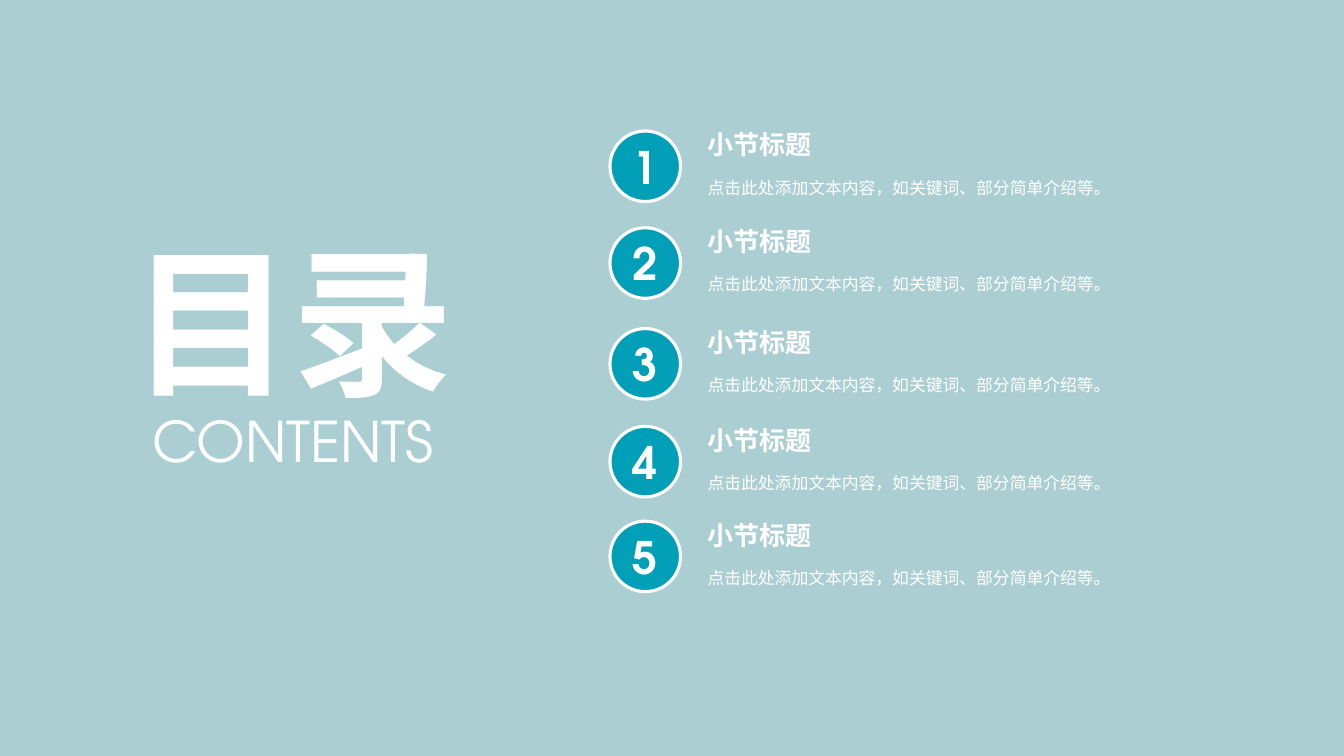
from dataclasses import dataclass

from lxml.etree import SubElement
from pptx import Presentation
from pptx.dml.color import RGBColor as RGB
from pptx.enum.shapes import MSO_SHAPE as SHAPE
from pptx.enum.text import MSO_ANCHOR as ANCHOR, MSO_AUTO_SIZE as FIT, PP_ALIGN as ALIGN
from pptx.oxml.ns import qn
from pptx.util import Inches, Pt

# Content
HEADING = "目录"
SUBHEADING = "CONTENTS"
BLURB = "点击此处添加文本内容，如关键词、部分简单介绍等。"
# (section title, description, row top in inches)
SECTIONS = [
    ("小节标题", BLURB, 1.23),
    ("小节标题", BLURB, 2.19),
    ("小节标题", BLURB, 3.19),
    ("小节标题", BLURB, 4.16),
    ("小节标题", BLURB, 5.10),
]


@dataclass(frozen=True)
class Theme:
    background: RGB = RGB.from_string("AACED2")
    accent: RGB = RGB.from_string("009FB8")
    text: RGB = RGB.from_string("FFFFFF")
    latin: str = "TeX Gyre Adventor"
    cjk: str = "Noto Sans CJK SC"
    heading: float = 115
    subheading: float = 40
    number: float = 32
    title: float = 18.6
    body: float = 12
    outline: float = 2.25


T = Theme()

# Layout: slide size, columns and offsets inside a row
WIDTH, HEIGHT = 13.33, 7.5
HEADING_CENTER = 2.905
BADGE_LEFT, BADGE_SIZE, BADGE_DROP = 6.05, 0.7, 0.07
TEXT_LEFT, TITLE_WIDTH, BODY_WIDTH = 6.92, 1.25, 4.23
TITLE_HEIGHT, BODY_HEIGHT = 0.42, 0.36


def write(tf, text, size, font=T.latin, bold=False, align=ALIGN.LEFT, spacing=None):
    p = tf.paragraphs[0]
    p.alignment = align
    if spacing:
        p.line_spacing = spacing
    r = p.add_run()
    r.text = text
    r.font.size, r.font.bold, r.font.name = Pt(size), bold, font
    r.font.color.rgb = T.text
    SubElement(r.font._element, qn("a:ea"), typeface=T.cjk)


def add_label(s, box, text, size, wrap=False, **style):
    tf = s.shapes.add_textbox(*map(Inches, box)).text_frame
    tf.word_wrap = wrap
    tf.auto_size = FIT.SHAPE_TO_FIT_TEXT
    write(tf, text, size, **style)


def add_badge(s, top, number):
    box = (BADGE_LEFT, top, BADGE_SIZE, BADGE_SIZE)
    sp = s.shapes.add_shape(SHAPE.OVAL, *map(Inches, box))
    sp.shadow.inherit = False
    sp.fill.solid()
    sp.fill.fore_color.rgb = T.accent
    sp.line.color.rgb = T.text
    sp.line.width = Pt(T.outline)
    sp.text_frame.vertical_anchor = ANCHOR.MIDDLE
    write(sp.text_frame, str(number), T.number, bold=True, align=ALIGN.CENTER)


def centered(width, top, height):
    return HEADING_CENTER - width / 2, top, width, height


def main():
    prs = Presentation()
    prs.slide_width, prs.slide_height = Inches(WIDTH), Inches(HEIGHT)
    s = prs.slides.add_slide(prs.slide_layouts[6])
    s.background.fill.solid()
    s.background.fill.fore_color.rgb = T.background

    # Subheading
    add_label(s, centered(3.03, 3.98, 0.77), SUBHEADING, T.subheading, align=ALIGN.CENTER)

    # Section rows
    for number, (title, body, top) in enumerate(SECTIONS, 1):
        add_label(s, (TEXT_LEFT, top, TITLE_WIDTH, TITLE_HEIGHT), title, T.title, bold=True)
        add_label(s, (TEXT_LEFT, top + TITLE_HEIGHT, BODY_WIDTH, BODY_HEIGHT), body, T.body,
                  wrap=True, spacing=1.3)
        add_badge(s, top + BADGE_DROP, number)

    # Main heading
    add_label(s, centered(3.43, 2.16, 2.04), HEADING, T.heading, font=T.cjk, bold=True,
              align=ALIGN.CENTER)

    prs.save("out.pptx")


if __name__ == "__main__":
    main()
